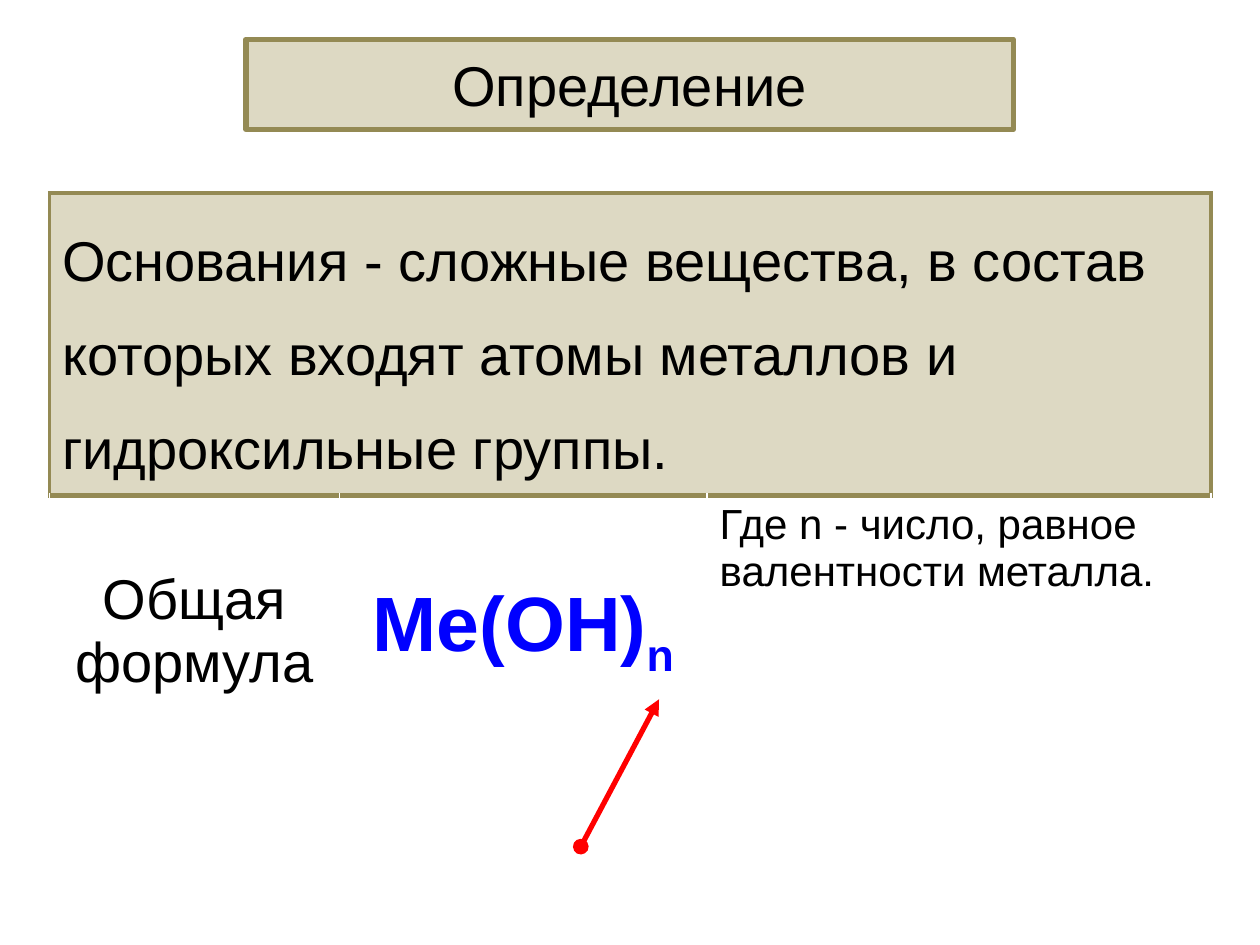
from dataclasses import dataclass

from lxml import etree
from pptx import Presentation, util as u
from pptx.dml.color import RGBColor
from pptx.enum import shapes, text
from pptx.oxml.ns import qn

SAND, OLIVE, BLACK, BLUE, RED = "DDD9C3", "948A54", "000000", "0000FF", "FF0000"
LEFT, CENTER = text.PP_ALIGN.LEFT, text.PP_ALIGN.CENTER
TOP, MIDDLE = text.MSO_ANCHOR.TOP, text.MSO_ANCHOR.MIDDLE


@dataclass
class Run:
    text: str
    size: float = 32
    color: str = BLACK
    bold: bool = False
    baseline: int = 0


@dataclass
class Entry:
    row: int
    col: int
    runs: list[Run]
    align: text.PP_ALIGN = LEFT
    anchor: text.MSO_ANCHOR = TOP
    spacing: float = 1.0


def rgb(value: str) -> RGBColor:
    return RGBColor.from_string(value)


def write(tf, runs: list[Run], align, spacing: float = 1.0) -> None:
    p = tf.paragraphs[0]
    p.alignment, p.line_spacing = align, spacing
    for run in runs:
        r = p.add_run()
        r.text = run.text
        r.font.name, r.font.size, r.font.bold = "Arial", u.Pt(run.size), run.bold
        r.font.color.rgb = rgb(run.color)
        if run.baseline:
            r.font._element.set("baseline", str(run.baseline * 1000))


def border(cell, sides: dict[str, float], color: str) -> None:
    tc_pr = cell._tc.get_or_add_tcPr()
    for side, width in sides.items():
        ln = etree.SubElement(tc_pr, qn(f"a:ln{side}"), w=str(u.Pt(width)))
        fill = etree.SubElement(ln, qn("a:solidFill"))
        etree.SubElement(fill, qn("a:srgbClr"), val=color)


def add_title(s, runs: list[Run]) -> None:
    sp = s.shapes.add_shape(shapes.MSO_SHAPE.ROUNDED_RECTANGLE,
                            u.Pt(140.5), u.Pt(22.5), u.Pt(438.5), u.Pt(51.5))
    sp.adjustments[0] = 0
    sp.shadow.inherit = False
    sp.fill.solid()
    sp.fill.fore_color.rgb = rgb(SAND)
    sp.line.color.rgb, sp.line.width = rgb(OLIVE), u.Pt(3)
    tf = sp.text_frame
    tf.word_wrap, tf.vertical_anchor = True, MIDDLE
    write(tf, runs, CENTER)


def add_table(s, widths: list[float], heights: list[float], entries: list[Entry]) -> None:
    table = s.shapes.add_table(len(heights), len(widths), u.Pt(28.3), u.Pt(110.3),
                               u.Pt(sum(widths)), u.Pt(sum(heights))).table
    table.first_row = table.horz_banding = False
    for column, width in zip(table.columns, widths):
        column.width = u.Pt(width)
    for row, height in zip(table.rows, heights):
        row.height = u.Pt(height)
    definition = table.cell(0, 0)
    definition.merge(table.cell(0, len(widths) - 1))
    border(definition, {"L": 2.25, "R": 2.25, "T": 2.25, "B": 3}, OLIVE)
    for col in range(len(widths)):
        cell = table.cell(1, col)
        border(cell, {"T": 3}, OLIVE)
        cell.fill.background()
    definition.fill.solid()
    definition.fill.fore_color.rgb = rgb(SAND)
    for entry in entries:
        cell = table.cell(entry.row, entry.col)
        cell.vertical_anchor = entry.anchor
        write(cell.text_frame, entry.runs, entry.align, entry.spacing)


def add_arrow(s, start: tuple[float, float], end: tuple[float, float]) -> None:
    cn = s.shapes.add_connector(shapes.MSO_CONNECTOR.STRAIGHT,
                                *(u.Pt(v) for v in start + end))
    cn.line.color.rgb, cn.line.width = rgb(RED), u.Pt(3)
    ln = cn.line._get_or_add_ln()
    etree.SubElement(ln, qn("a:headEnd"), type="oval")
    etree.SubElement(ln, qn("a:tailEnd"), type="triangle")
    etree.SubElement(cn._element.spPr, qn("a:effectLst"))


def main() -> None:
    """Build the slide that defines bases and their general formula."""
    prs = Presentation()
    prs.slide_width, prs.slide_height = u.Pt(720), u.Pt(540)
    s = prs.slides.add_slide(prs.slide_layouts[6])
    add_title(s, [Run("Определение")])
    add_table(s, [165.6, 210.2, 288], [172.8, 155.5], [
        Entry(0, 0, [Run("Основания - сложные вещества, в состав которых входят "
                         "атомы металлов и гидроксильные группы.")], spacing=1.5),
        Entry(1, 0, [Run("Общая формула")], CENTER, MIDDLE),
        Entry(1, 1, [Run("Ме(ОН)", 44, BLUE, True), Run("n", 44, BLUE, True, -25)],
              CENTER, MIDDLE),
        Entry(1, 2, [Run("Где n - число, равное валентности металла.", 24)]),
    ])
    add_arrow(s, (331.9, 483.8), (376.6, 399.6))
    prs.save("out.pptx")


if __name__ == "__main__":
    main()
